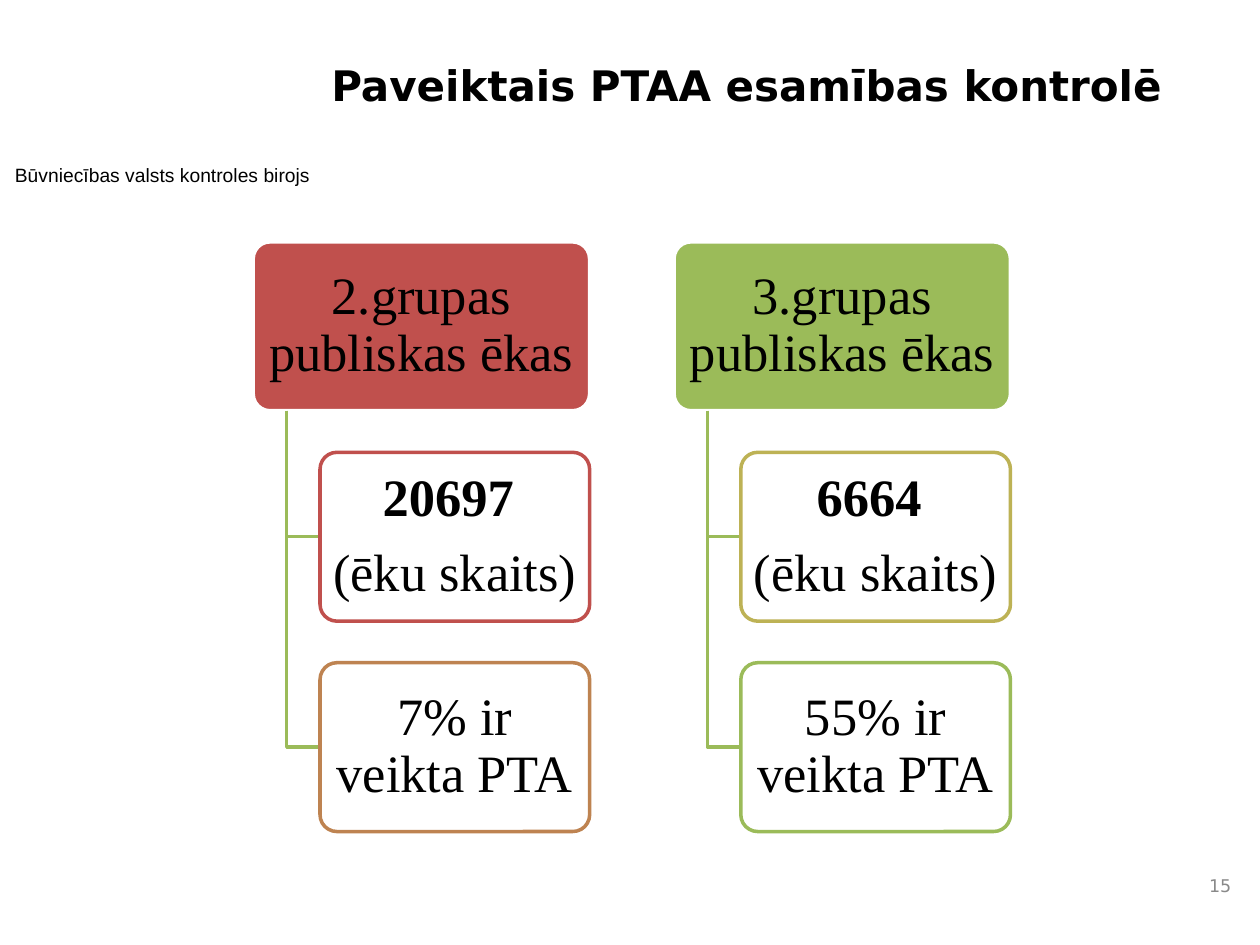
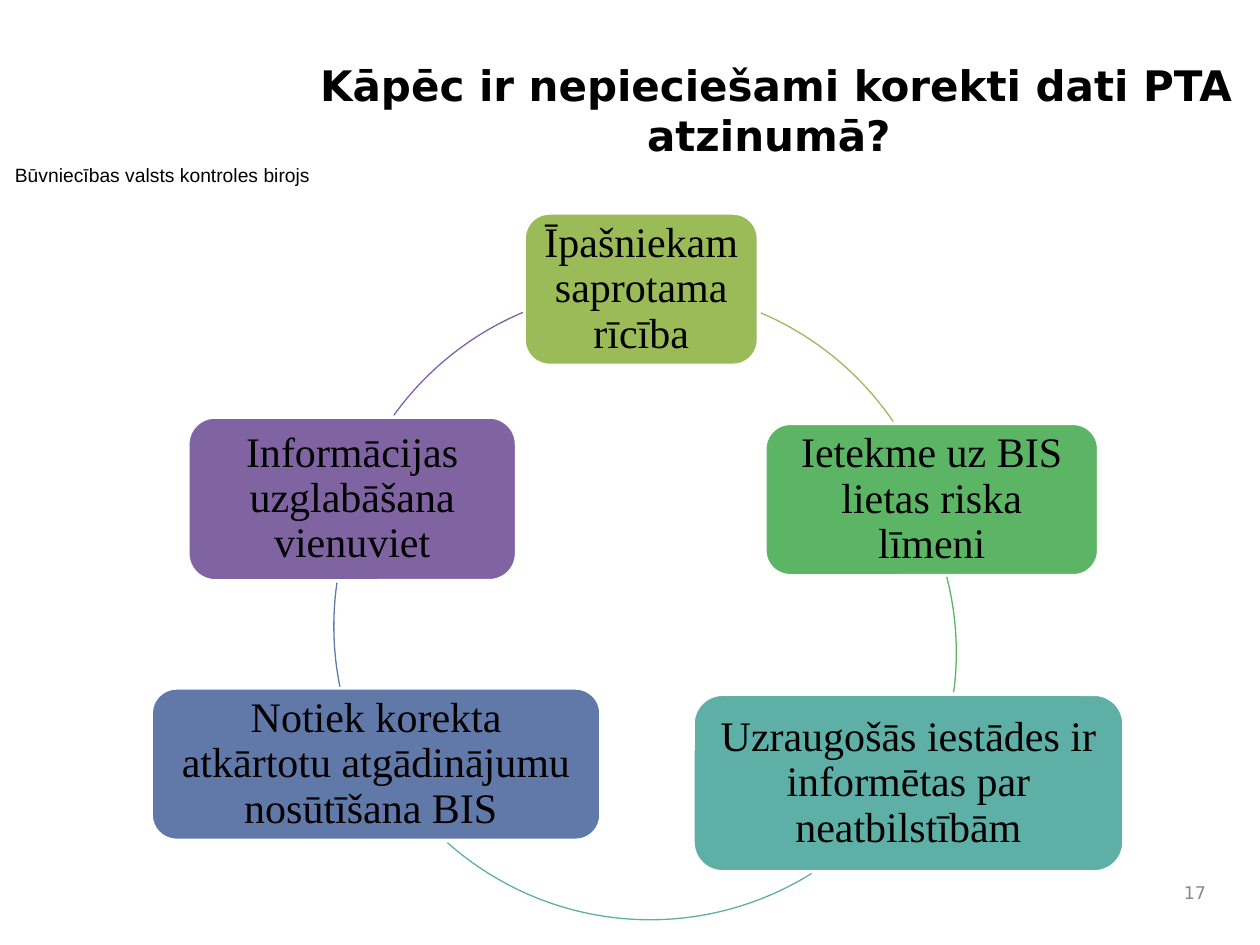
import math

from pptx import Presentation
from pptx import util as u
from pptx.dml import color
from pptx.enum import shapes, text

BLACK, WHITE, GREY = "000000", "FFFFFF", "898989"
RED, GREEN, BROWN, SAND = "C0504D", "9BBB59", "BE8351", "BDB255"
LEAF, TEAL, BLUE, PLUM = "5CB565", "5EAFA6", "6179A8", "8064A2"
SANS, SERIF = "DejaVu Sans", "Times New Roman"
LEFT, MID, RIGHT = text.PP_ALIGN.LEFT, text.PP_ALIGN.CENTER, text.PP_ALIGN.RIGHT
TOP, CENTRE = text.MSO_ANCHOR.TOP, text.MSO_ANCHOR.MIDDLE

TITLE = {"name": SANS, "size": u.Pt(24), "bold": True}
BAND = {"name": "Arial", "size": u.Pt(11)}
NUMBER = {"name": SANS, "size": u.Pt(10)}
TREE = {"name": SERIF, "size": u.Pt(30)}
CYCLE = {"name": SERIF, "size": u.Pt(24)}


def put(item, values):
    for key, value in values.items():
        setattr(item, key, value)


def hue(code):
    return color.RGBColor.from_string(code)


def box(at):
    return [u.Inches(n) for n in at]


def paint(shape, fill=None, line=None, width=2):
    shape.shadow.inherit = False
    if fill:
        shape.fill.solid()
        shape.fill.fore_color.rgb = hue(fill)
    else:
        shape.fill.background()
    if line:
        shape.line.color.rgb = hue(line)
        shape.line.width = u.Pt(width)
    else:
        shape.line.fill.background()


def write(shape, lines, font, ink=BLACK, align=MID, anchor=CENTRE,
          pad=(0.1, 0.05), para=None):
    """Fill a shape with lines; a line is a string or (string, bold)."""
    frame = shape.text_frame
    side, edge = box(pad)
    put(frame, {"word_wrap": True, "auto_size": text.MSO_AUTO_SIZE.NONE,
                "vertical_anchor": anchor, "margin_left": side,
                "margin_right": side, "margin_top": edge, "margin_bottom": edge})
    for i, line in enumerate(lines):
        words, bold = line if isinstance(line, tuple) else (line, font.get("bold", False))
        p = frame.paragraphs[0] if i == 0 else frame.add_paragraph()
        put(p, {"alignment": align, **(para or {})})
        if i:
            p.space_before = u.Pt(10.5)
        run = p.add_run()
        run.text = words
        put(run.font, {**font, "bold": bold})
        run.font.color.rgb = hue(ink)


def card(slide, at, lines, font, fill, line, pad, adj=None):
    shape = slide.shapes.add_shape(shapes.MSO_SHAPE.ROUNDED_RECTANGLE, *box(at))
    if adj:
        shape.adjustments[0] = adj
    paint(shape, fill, line)
    write(shape, lines, font, pad=pad, para={"line_spacing": 0.9})


def elbow(slide, points, ink):
    first, *rest = [box(p) for p in points]
    form = slide.shapes.build_freeform(*first)
    form.add_line_segments(rest, close=False)
    paint(form.convert_to_shape(), None, ink)


def arc(slide, corner, ends, ink, size=4.84):
    """Draw a clockwise arc between two points of a circle."""
    shape = slide.shapes.add_shape(shapes.MSO_SHAPE.ARC, *box((*corner, size, size)))
    mid_x, mid_y = (n + size / 2 for n in corner)
    for i, (x, y) in enumerate(ends):
        angle = math.degrees(math.atan2(y - mid_y, x - mid_x)) % 360
        shape.adjustments[i] = angle * 0.6  # 60000 units a degree, scaled by 100000
    paint(shape, None, ink, 0.75)


def start(deck, title, at, align, number, spot):
    """Add a slide with the shared band, title and page number."""
    slide = deck.slides.add_slide(deck.slide_layouts[5])
    head = slide.shapes.title
    put(head, dict(zip(("left", "top", "width", "height"), box(at))))
    write(head, [title], TITLE, align=align, anchor=TOP)
    band = slide.shapes.add_shape(shapes.MSO_SHAPE.RECTANGLE, *box((0.02, 1.25, 2.84, 0.28)))
    paint(band, WHITE)
    write(band, ["Būvniecības valsts kontroles birojs"], BAND, align=LEFT, anchor=TOP)
    page = slide.shapes.add_textbox(*box(spot))
    write(page, [number], NUMBER, GREY, RIGHT)
    return slide


def groups(deck):
    slide = start(deck, "Paveiktais PTAA esamības kontrolē", (2.53, 0.42, 6.97, 1.13),
                  LEFT, "15", (9.33, 6.81, 0.54, 0.44))
    top, step, wide, high, shift = 1.92, 1.67, 2.67, 1.34, 0.53
    trees = [
        ("2.grupas publiskas ēkas", RED, "20697 ", RED, "7% ir veikta PTA", BROWN),
        ("3.grupas publiskas ēkas", GREEN, "6664 ", SAND, "55% ir veikta PTA", GREEN),
    ]
    for i, (name, fill, count, rim, share, edge) in enumerate(trees):
        x = 2.01 + i * 3.34
        card(slide, (x, top, wide, high), [name], TREE, fill, WHITE, (0.06, 0.04), 0.1)
        kids = [([(count, True), "(ēku skaits)"], rim), ([share], edge)]
        for row, (lines, ink) in enumerate(kids, 1):
            y = top + row * step
            stem, mid = x + shift / 2, y + high / 2
            elbow(slide, [(stem, top + high), (stem, mid), (x + shift, mid)], GREEN)
            card(slide, (x + shift, y, wide - shift, high), lines, TREE,
                 WHITE, ink, (0.06, 0.04), 0.1)


def cycle(deck):
    slide = start(deck, "Kāpēc ir nepieciešami korekti dati PTA atzinumā? ",
                  (2.32, 0.42, 7.68, 1.13), MID, "17", (8.75, 6.92, 0.92, 0.33))
    # Each step: text, place, colour, then corner and ends of the arc that leaves it
    steps = [
        ("Īpašniekam saprotama rīcība", (4.16, 1.69, 1.86, 1.21), GREEN,
         (2.67, 2.29), [(6.04, 2.48), (7.09, 3.35)]),
        ("Ietekme uz BIS lietas riska līmeni", (6.07, 3.36, 2.65, 1.21), LEAF,
         (2.75, 2.76), [(7.51, 4.58), (7.56, 5.5)]),
        ("Uzraugošās iestādes ir informētas par neatbilstībām", (5.5, 5.51, 3.42, 1.41), TEAL,
         (2.74, 2.46), [(6.44, 6.93), (3.55, 6.69)]),
        ("Notiek korekta atkārtotu atgādinājumu nosūtīšana BIS ", (1.2, 5.46, 3.57, 1.21), BLUE,
         (2.65, 2.55), [(2.7, 5.45), (2.68, 4.62)]),
        ("Informācijas uzglabāšana vienuviet", (1.49, 3.31, 2.61, 1.3), PLUM,
         (2.67, 2.29), [(3.13, 3.3), (4.15, 2.48)]),
    ]
    for words, at, ink, corner, ends in steps:
        card(slide, at, [words], CYCLE, ink, WHITE, (0.1, 0.1))
        arc(slide, corner, ends, ink)


def main():
    deck = Presentation()
    put(deck, {"slide_width": u.Inches(10), "slide_height": u.Inches(7.5)})
    groups(deck)
    cycle(deck)
    deck.save("out.pptx")


if __name__ == "__main__":
    main()
